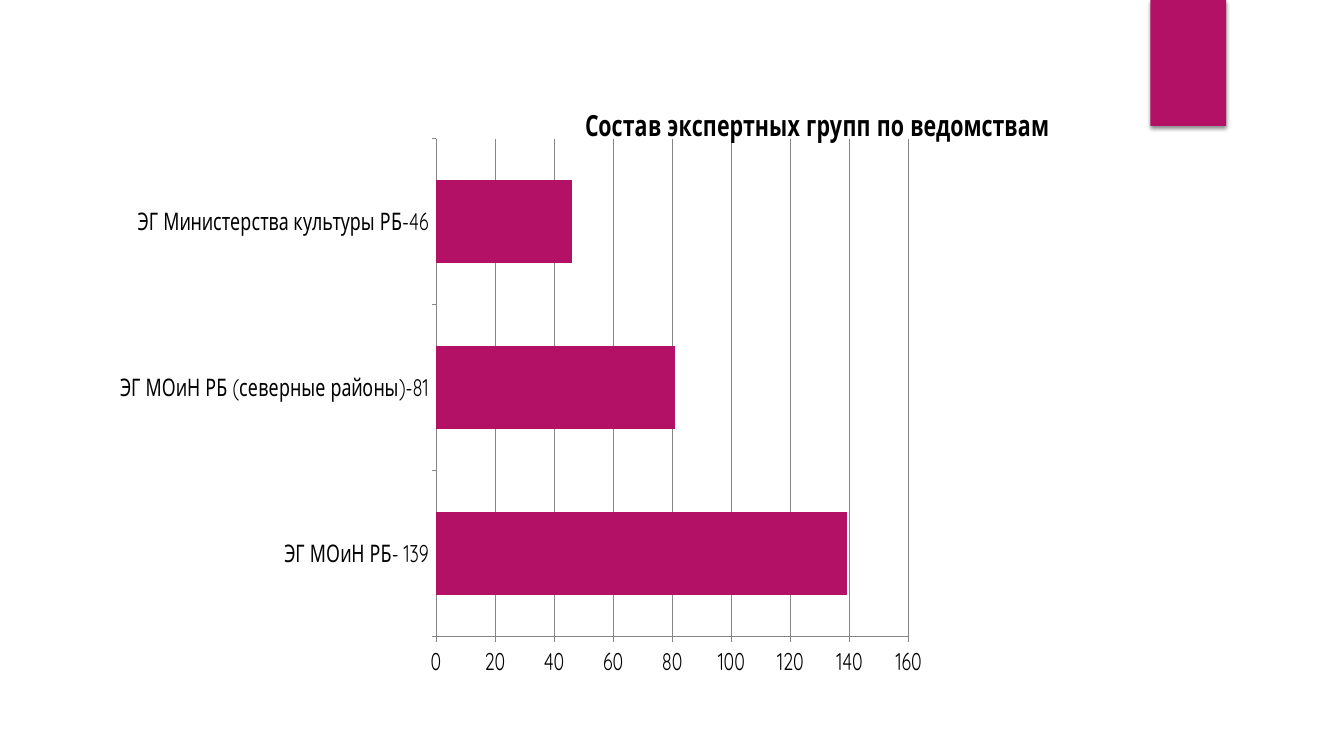
import pptx
import pptx.chart.data
import pptx.dml.color
import pptx.enum.chart
import pptx.enum.shapes
import pptx.oxml
import pptx.oxml.ns
import pptx.util

Pt = pptx.util.Pt
FONT = "Quicksand"
ACCENT, TEXT, LINE = "B31166", "000000", "868686"
EXPERT_GROUPS = {
    "ЭГ МОиН РБ- 139": 139,
    "ЭГ МОиН РБ (северные районы)-81": 81,
    "ЭГ Министерства культуры РБ-46": 46,
}


def color(value):
    return pptx.dml.color.RGBColor.from_string(value)


def paint(fill, value):
    fill.solid()
    fill.fore_color.rgb = color(value)


def style_font(font, size, bold=False):
    font.name = FONT
    font.size = Pt(size)
    font.bold = bold
    font.color.rgb = color(TEXT)


def add_tab(page):
    """Add the coloured tab with its soft shadow at the top edge."""
    tab = page.shapes.add_shape(
        pptx.enum.shapes.MSO_SHAPE.RECTANGLE, Pt(821.8), 0, Pt(54), Pt(90))
    paint(tab.fill, ACCENT)
    tab.line.fill.background()
    tab.shadow.inherit = False
    effects = tab.element.spPr.find(pptx.oxml.ns.qn("a:effectLst"))
    effects.append(pptx.oxml.parse_xml(
        f'<a:outerShdw {pptx.oxml.ns.nsdecls("a")} blurRad="{Pt(3)}" '
        f'dist="{Pt(2)}" dir="5400000" rotWithShape="0">'
        '<a:srgbClr val="000000"><a:alpha val="45000"/></a:srgbClr>'
        '</a:outerShdw>'))


def place_plot(plot_area, **fractions):
    """Fix the inner plot at the given fractions of the chart area."""
    for layout in plot_area.findall(pptx.oxml.ns.qn("c:layout")):
        plot_area.remove(layout)
    values = "".join(
        f'<c:{key} val="{value}"/>' for key, value in fractions.items())
    plot_area.insert(0, pptx.oxml.parse_xml(
        f'<c:layout {pptx.oxml.ns.nsdecls("c")}><c:manualLayout>'
        '<c:layoutTarget val="inner"/><c:xMode val="edge"/>'
        f'<c:yMode val="edge"/>{values}</c:manualLayout></c:layout>'))


def style_axis(axis):
    axis.major_tick_mark = pptx.enum.chart.XL_TICK_MARK.OUTSIDE
    axis.minor_tick_mark = pptx.enum.chart.XL_TICK_MARK.NONE
    axis.format.line.color.rgb = color(LINE)
    axis.format.line.width = Pt(0.75)
    style_font(axis.tick_labels.font, 18)


def add_title(chart, text):
    chart.has_title = True
    span = chart.chart_title.text_frame.paragraphs[0].add_run()
    span.text = text
    style_font(span.font, 21.6, bold=True)


def add_bar_chart(page, title, values):
    data = pptx.chart.data.CategoryChartData()
    data.categories = list(values)
    data.add_series("Series 1", list(values.values()))
    chart = page.shapes.add_chart(
        pptx.enum.chart.XL_CHART_TYPE.BAR_CLUSTERED,
        Pt(85.7), Pt(58.3), Pt(770.4), Pt(424.8), data).chart
    style_font(chart.font, 18)
    chart.has_legend = False
    add_title(chart, title)
    place_plot(chart._chartSpace.chart.plotArea, x=0, y=0.1, w=0.62, h=0.87)

    plot = chart.plots[0]
    plot.gap_width = 100
    plot.vary_by_categories = False
    paint(plot.series[0].format.fill, ACCENT)

    style_axis(chart.category_axis)
    axis = chart.value_axis
    style_axis(axis)
    axis.has_major_gridlines = True
    axis.major_gridlines.format.line.color.rgb = color(LINE)
    axis.major_gridlines.format.line.width = Pt(0.75)


def main():
    deck = pptx.Presentation()
    deck.slide_width, deck.slide_height = Pt(960), Pt(540)
    page = deck.slides.add_slide(deck.slide_layouts[6])
    add_tab(page)
    add_bar_chart(page, "Состав экспертных групп по ведомствам", EXPERT_GROUPS)
    deck.save("out.pptx")


if __name__ == "__main__":
    main()
